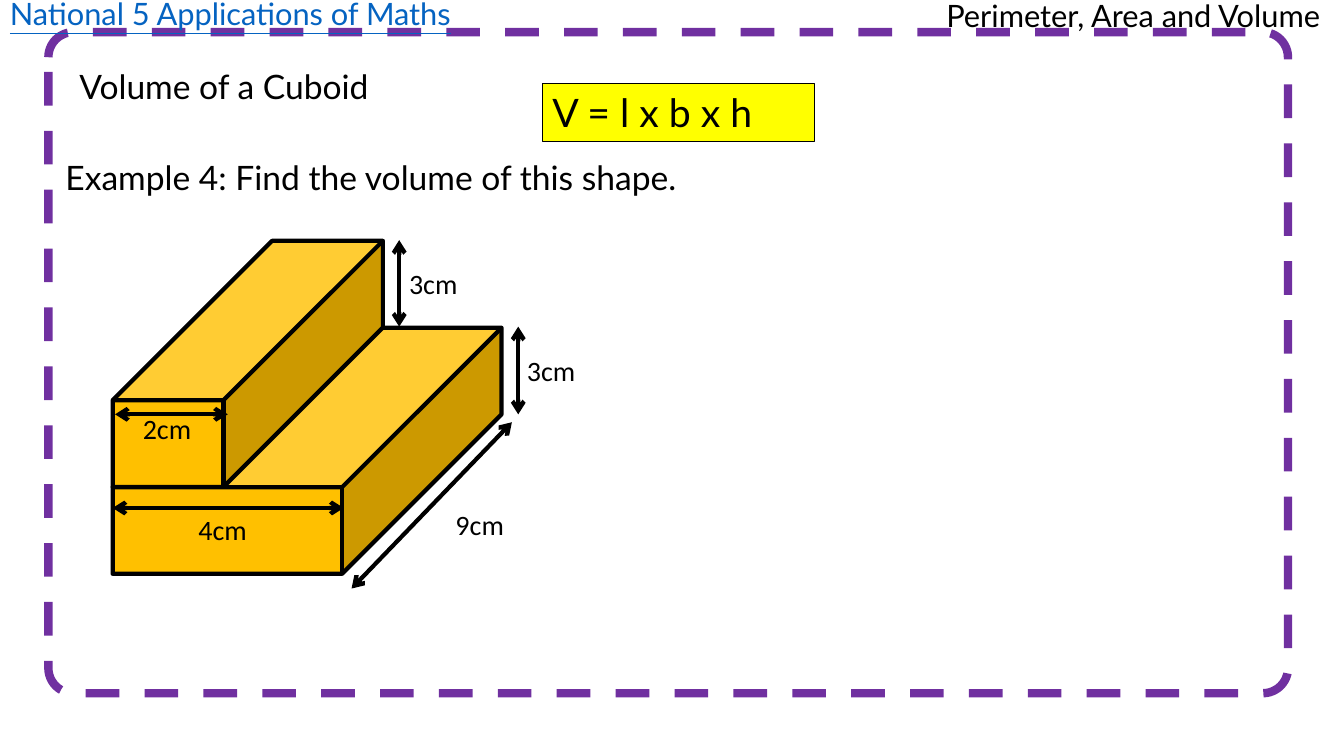
from lxml.etree import SubElement
from pptx import Presentation
from pptx.dml.color import RGBColor
from pptx.enum.dml import MSO_LINE
from pptx.enum.shapes import MSO_CONNECTOR, MSO_SHAPE
from pptx.enum.text import MSO_ANCHOR, PP_ALIGN
from pptx.oxml.ns import qn
from pptx.util import Cm, Pt

COLOURS = {
    "ink": "000000",
    "border": "7030A0",
    "link": "0563C1",
    "formula": "FFFF00",
    "cuboid": "FFC000",
}


def rgb(name):
    return RGBColor.from_string(COLOURS[name])


def style_line(line, colour, width):
    line.color.rgb = rgb(colour)
    line.width = Pt(width)


def add_block(slide, preset, box, fill, line_colour, line_width, adjustment=None):
    block = slide.shapes.add_shape(preset, *map(Cm, box))
    block.shadow.inherit = False
    if fill:
        block.fill.solid()
        block.fill.fore_color.rgb = rgb(fill)
    else:
        block.fill.background()
    style_line(block.line, line_colour, line_width)
    if adjustment is not None:
        block.adjustments[0] = adjustment
    return block


def write(frame, wording, size, font="Lato", colour="ink", wrap=True, underline=False):
    frame.word_wrap = wrap
    frame.vertical_anchor = MSO_ANCHOR.TOP
    paragraph = frame.paragraphs[0]
    paragraph.alignment = PP_ALIGN.LEFT
    run = paragraph.add_run()
    run.text = wording
    run.font.name = font
    run.font.size = Pt(size)
    run.font.color.rgb = rgb(colour)
    if underline:
        run.font.underline = True


def add_text(slide, wording, box, size, **style):
    text_box = slide.shapes.add_textbox(*map(Cm, box))
    write(text_box.text_frame, wording, size, **style)


def add_dimension(slide, start, end):
    arrow = slide.shapes.add_connector(MSO_CONNECTOR.STRAIGHT, *map(Cm, start + end))
    style_line(arrow.line, "ink", 3)
    outline = arrow.line._get_or_add_ln()
    for tip in ("a:headEnd", "a:tailEnd"):
        SubElement(outline, qn(tip), type="arrow")
    SubElement(arrow._element.spPr, qn("a:effectLst"))


def add_measure(slide, wording, left, top):
    add_text(slide, wording, (left, top, 1.75, 1.11), 20, font="Calibri", wrap=False)


def add_headings(slide):
    add_text(slide, "Perimeter, Area and Volume", (23.6, -0.2, 10.26, 1.2), 22, wrap=False)
    add_text(slide, "National 5 Applications of Maths", (0, -0.25, 11.76, 1.2), 22,
             colour="link", wrap=False, underline=True)
    add_text(slide, "Volume of a Cuboid", (1.75, 1.53, 14.8, 1.28), 24)
    formula = add_block(slide, MSO_SHAPE.RECTANGLE, (13.67, 2.11, 6.86, 1.45),
                        "formula", "ink", 0.75)
    write(formula.text_frame, "V = l x b x h", 28)
    add_text(slide, "Example 4: Find the volume of this shape.", (1.4, 3.84, 21.95, 1.28), 24)


def add_solid(slide):
    for top, width in ((8.26, 9.8), (6.07, 6.81)):
        add_block(slide, MSO_SHAPE.CUBE, (2.84, top, width, 6.2), "cuboid", "ink", 3, 0.648)
    dimensions = (
        ("9cm", (12.9, 10.64), (8.86, 14.83), (11.23, 12.67)),
        ("3cm", (10.06, 6.05), (10.06, 8.23), (10.06, 6.58)),
        ("3cm", (13.06, 8.23), (13.06, 10.44), (13.03, 8.79)),
        ("4cm", (2.84, 12.8), (8.66, 12.8), (4.75, 12.8)),
        ("2cm", (2.9, 10.44), (5.74, 10.44), (3.35, 10.24)),
    )
    for _, start, end, _ in dimensions:
        add_dimension(slide, start, end)
    for wording, _, _, place in dimensions:
        add_measure(slide, wording, *place)


def main():
    deck = Presentation()
    deck.slide_width, deck.slide_height = Cm(33.87), Cm(19.05)
    slide = deck.slides.add_slide(deck.slide_layouts[6])
    border = add_block(slide, MSO_SHAPE.ROUNDED_RECTANGLE, (1.22, 0.81, 31.24, 16.66),
                       None, "border", 6, 0.038)
    border.line.dash_style = MSO_LINE.DASH
    add_headings(slide)
    add_solid(slide)
    deck.save("out.pptx")


if __name__ == "__main__":
    main()
